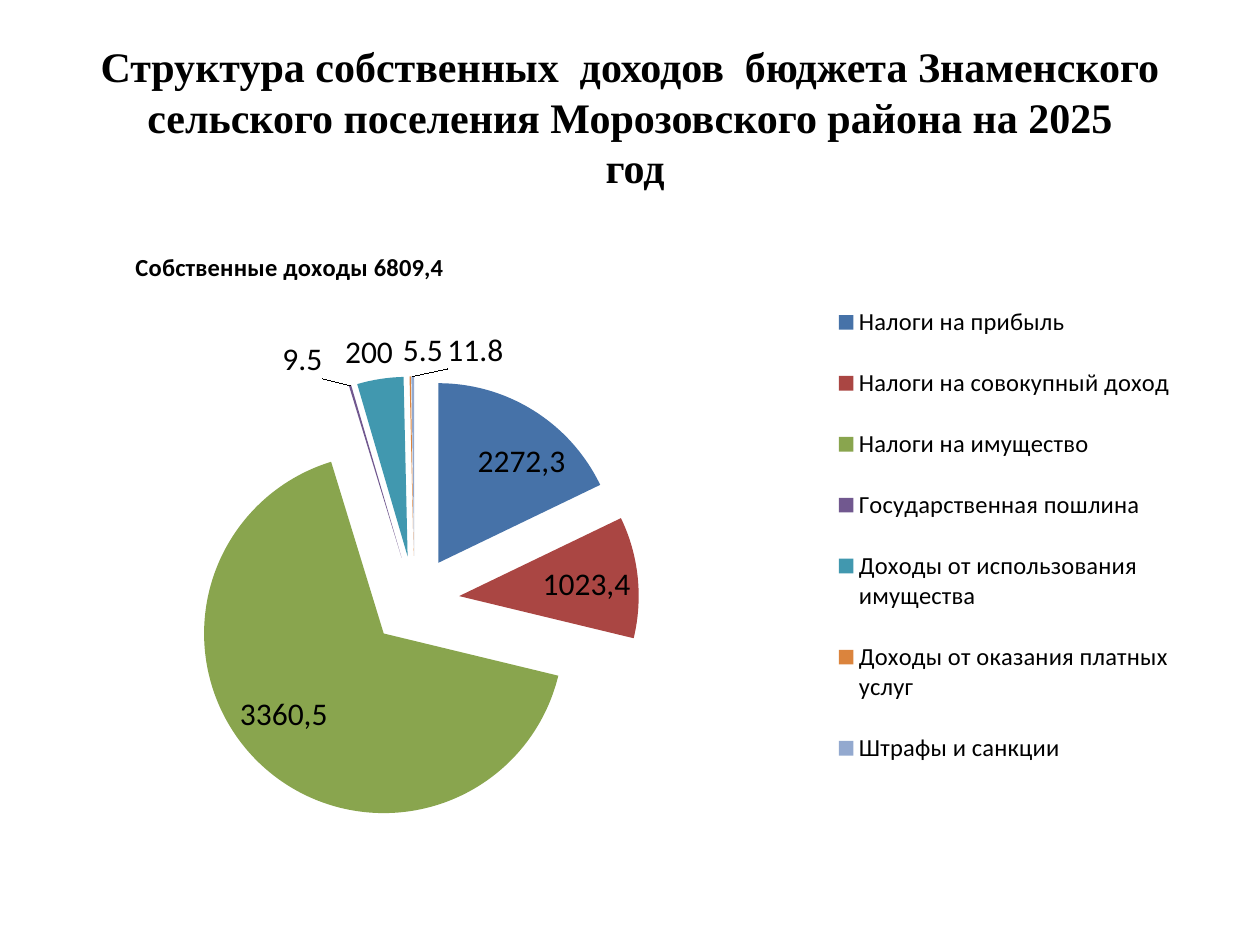
from dataclasses import dataclass
from typing import Optional

from lxml import etree
from pptx import Presentation
from pptx.chart.data import CategoryChartData
from pptx.dml.color import RGBColor
from pptx.enum.chart import XL_CHART_TYPE, XL_LABEL_POSITION, XL_LEGEND_POSITION
from pptx.enum.text import MSO_ANCHOR, PP_ALIGN
from pptx.oxml.ns import qn
from pptx.util import Inches, Pt

PIE = XL_CHART_TYPE.PIE
BEST_FIT = XL_LABEL_POSITION.BEST_FIT
LEGEND_RIGHT = XL_LEGEND_POSITION.RIGHT
MIDDLE = MSO_ANCHOR.MIDDLE
CENTER = PP_ALIGN.CENTER

COLORS = {
    "text": "000000",
    "blue": "4672A8",
    "red": "AA4643",
    "green": "89A54E",
    "purple": "71588F",
    "teal": "4198AF",
    "orange": "DB843D",
    "light_blue": "93A9CF",
}


@dataclass
class Income:
    name: str
    value: float
    color: str
    label: Optional[str] = None


INCOMES = [
    Income("Налоги на прибыль", 856.7, "blue", "2272,3"),
    Income("Налоги на совокупный доход", 524, "red", "1023,4"),
    Income("Налоги на имущество", 3191, "green", "3360,5"),
    Income("Государственная пошлина", 9.5, "purple"),
    Income("Доходы от использования имущества", 200, "teal"),
    Income("Доходы от оказания платных услуг", 5.5, "orange"),
    Income("Штрафы и санкции", 11.8, "light_blue"),
]


def rgb(name: str) -> RGBColor:
    return RGBColor.from_string(COLORS[name])


def style_font(font, size: int, name: str = "Calibri", bold: bool = False) -> None:
    font.size = Pt(size)
    font.name = name
    font.bold = bold
    font.color.rgb = rgb("text")


def set_layout(parent, after: Optional[str], **fractions: float) -> None:
    """Place a chart part by fractions of the chart, following the child named in after."""
    for old in parent.findall(qn("c:layout")):
        parent.remove(old)
    layout = etree.Element(qn("c:layout"))
    manual = etree.SubElement(layout, qn("c:manualLayout"))
    if after is None:
        etree.SubElement(manual, qn("c:layoutTarget")).set("val", "inner")
    for axis in ("x", "y"):
        etree.SubElement(manual, qn(f"c:{axis}Mode")).set("val", "edge")
    for key, value in fractions.items():
        etree.SubElement(manual, qn(f"c:{key}")).set("val", str(value))
    if after is None:
        parent.insert(0, layout)
    else:
        parent.find(qn(after)).addnext(layout)


def add_title(s) -> None:
    box = s.shapes.add_textbox(Inches(0.5), Inches(0.3), Inches(9), Inches(1.25))
    tf = box.text_frame
    tf.word_wrap = True
    tf.vertical_anchor = MIDDLE
    p = tf.paragraphs[0]
    p.text = ("Структура собственных  доходов  бюджета Знаменского "
              "сельского поселения Морозовского района на 2025\v год")
    p.alignment = CENTER
    style_font(p.font, 24, "Times New Roman", bold=True)


def style_slices(plot) -> None:
    plot.vary_by_categories = True
    plot.has_data_labels = True
    labels = plot.data_labels
    labels.show_value = True
    labels.position = BEST_FIT
    style_font(labels.font, 18)

    series = plot.series[0]
    explosion = etree.Element(qn("c:explosion"))
    explosion.set("val", "25")
    series._element.find(qn("c:tx")).addnext(explosion)
    for i, income in enumerate(INCOMES):
        point = series.points[i]
        point.format.fill.solid()
        point.format.fill.fore_color.rgb = rgb(income.color)
        label = point.data_label
        if income.label:
            p = label.text_frame.paragraphs[0]
            p.text = income.label
            style_font(p.font, 18)
        else:
            style_font(label.font, 18)
        label.position = BEST_FIT
    leader = series._element.find(qn("c:dLbls")).find(qn("c:showLeaderLines"))
    if leader is not None:
        leader.set("val", "1")


def add_income_chart(s) -> None:
    data = CategoryChartData()
    data.categories = [income.name for income in INCOMES]
    data.add_series("Собственные доходы", [income.value for income in INCOMES])
    chart = s.shapes.add_chart(
        PIE, Inches(0.5), Inches(1.75), Inches(9), Inches(4.95), data).chart
    style_font(chart.font, 18)

    chart.has_title = True
    p = chart.chart_title.text_frame.paragraphs[0]
    p.text = "Собственные доходы 6809,4"
    style_font(p.font, 14, bold=True)
    set_layout(chart.chart_title._element, "c:tx", x=0.06, y=0.04)

    chart.has_legend = True
    chart.legend.position = LEGEND_RIGHT
    chart.legend.include_in_layout = False
    style_font(chart.legend.font, 14)
    set_layout(chart.legend._element, "c:legendPos", x=0.67, y=0.09, w=0.32, h=0.83)

    style_slices(chart.plots[0])
    plot_area = chart._chartSpace.chart.plotArea
    set_layout(plot_area, None, x=0.11, y=0.25, w=0.4, h=0.72)


def main() -> None:
    prs = Presentation()
    prs.slide_width, prs.slide_height = Inches(10), Inches(7.5)
    s = prs.slides.add_slide(prs.slide_layouts[6])
    add_title(s)
    add_income_chart(s)
    prs.save("out.pptx")


if __name__ == "__main__":
    main()
